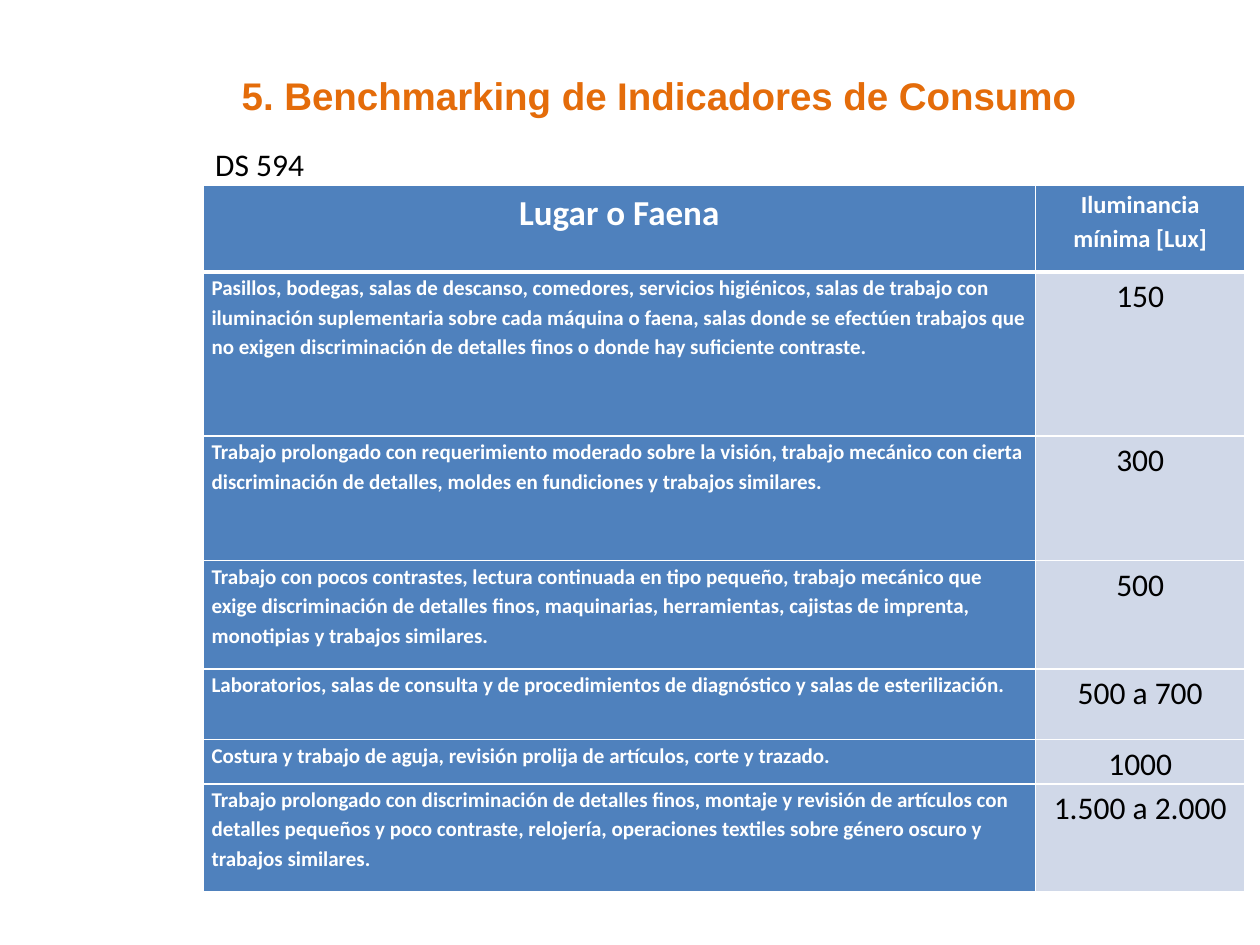
"""Builds the slide of minimum illuminance levels by workplace (DS 594)."""
import lxml.etree
import pptx
import pptx.dml.color
import pptx.enum.text
import pptx.oxml.ns
import pptx.util

TITLE = "5. Benchmarking de Indicadores de Consumo"
DECREE = "DS 594"
HEADINGS = (("Lugar o Faena", 20), ("Iluminancia mínima [Lux]", 14))
LEVELS = [
    ("Pasillos, bodegas, salas de descanso, comedores, servicios higiénicos, salas de trabajo con "
     "iluminación suplementaria sobre cada máquina o faena, salas donde se efectúen trabajos que no "
     "exigen discriminación de detalles finos o donde hay suficiente contraste.", "150", 1.3),
    ("Trabajo prolongado con requerimiento moderado sobre la visión, trabajo mecánico con cierta "
     "discriminación de detalles, moldes en fundiciones y trabajos similares.", "300", 0.99),
    ("Trabajo con pocos contrastes, lectura continuada en tipo pequeño, trabajo mecánico que exige "
     "discriminación de detalles finos, maquinarias, herramientas, cajistas de imprenta, monotipias "
     "y trabajos similares.", "500", 0.86),
    ("Laboratorios, salas de consulta y de procedimientos de diagnóstico y salas de esterilización.",
     "500 a 700", 0.56),
    ("Costura y trabajo de aguja, revisión prolija de artículos, corte y trazado.", "1000", 0.33),
    ("Trabajo prolongado con discriminación de detalles finos, montaje y revisión de artículos con "
     "detalles pequeños y poco contraste, relojería, operaciones textiles sobre género oscuro y "
     "trabajos similares.", "1.500 a 2.000", 0.86),
]
COLUMN_WIDTHS = (6.61, 1.66)
HEADING_HEIGHT = 0.69
TABLE_LEFT, TABLE_TOP = 1.61, 1.47
BLUE, PALE, WHITE, BLACK, ORANGE = "4F81BD", "D0D8E8", "FFFFFF", "000000", "E46C0A"
CENTER = pptx.enum.text.PP_ALIGN.CENTER
LEFT = pptx.enum.text.PP_ALIGN.LEFT
inches = pptx.util.Inches


def color(value):
    return pptx.dml.color.RGBColor.from_string(value)


def style(paragraph, size, ink, bold=False, face="Calibri"):
    font = paragraph.font
    font.size, font.bold, font.name = pptx.util.Pt(size), bold, face
    font.color.rgb = color(ink)


def add_label(slide, text, box, wrap, size, ink, **look):
    frame = slide.shapes.add_textbox(*map(inches, box)).text_frame
    frame.word_wrap = wrap
    frame.text = text
    style(frame.paragraphs[0], size, ink, **look)
    return frame


def draw_borders(cell, bottom):
    properties = cell._tc.get_or_add_tcPr()
    qn = pptx.oxml.ns.qn
    for position, (side, width) in enumerate((("L", 1), ("R", 1), ("T", 1), ("B", bottom))):
        edge = lxml.etree.Element(qn(f"a:ln{side}"), w=str(pptx.util.Pt(width)))
        paint = lxml.etree.SubElement(edge, qn("a:solidFill"))
        lxml.etree.SubElement(paint, qn("a:srgbClr"), val=WHITE)
        properties.insert(position, edge)


def fill_cell(cell, text, size, fill, ink, bold, align, bottom=1):
    cell.margin_left = cell.margin_right = inches(0.07)
    cell.margin_top = cell.margin_bottom = 0
    cell.fill.solid()
    cell.fill.fore_color.rgb = color(fill)
    draw_borders(cell, bottom)
    cell.text = text
    paragraph = cell.text_frame.paragraphs[0]
    paragraph.alignment, paragraph.line_spacing = align, 1.15
    style(paragraph, size, ink, bold)


def add_levels(slide):
    heights = [HEADING_HEIGHT] + [height for *_, height in LEVELS]
    table = slide.shapes.add_table(
        len(heights), len(COLUMN_WIDTHS), inches(TABLE_LEFT), inches(TABLE_TOP),
        inches(sum(COLUMN_WIDTHS)), inches(sum(heights))).table
    table.first_col = True
    table.horz_banding = False
    for column, width in zip(table.columns, COLUMN_WIDTHS):
        column.width = inches(width)
    for row, height in zip(table.rows, heights):
        row.height = inches(height)
    for column, (heading, size) in enumerate(HEADINGS):
        fill_cell(table.cell(0, column), heading, size, BLUE, WHITE, True, CENTER, bottom=3)
    for row, (place, lux, _) in enumerate(LEVELS, 1):
        fill_cell(table.cell(row, 0), place, 12, BLUE, WHITE, True, LEFT)
        fill_cell(table.cell(row, 1), lux, 18, PALE, BLACK, False, CENTER)


def main():
    deck = pptx.Presentation()
    deck.slide_width, deck.slide_height = inches(10), inches(7.5)
    slide = deck.slides.add_slide(deck.slide_layouts[6])
    add_levels(slide)
    add_label(slide, TITLE, (1.82, 0.52, 7.19, 0.45), True, 22, ORANGE, bold=True, face="Arial")
    decree = add_label(slide, DECREE, (TABLE_LEFT, 1.1, 0.92, 0.4), False, 18, BLACK)
    decree.auto_size = pptx.enum.text.MSO_AUTO_SIZE.SHAPE_TO_FIT_TEXT
    deck.save("out.pptx")


if __name__ == "__main__":
    main()
